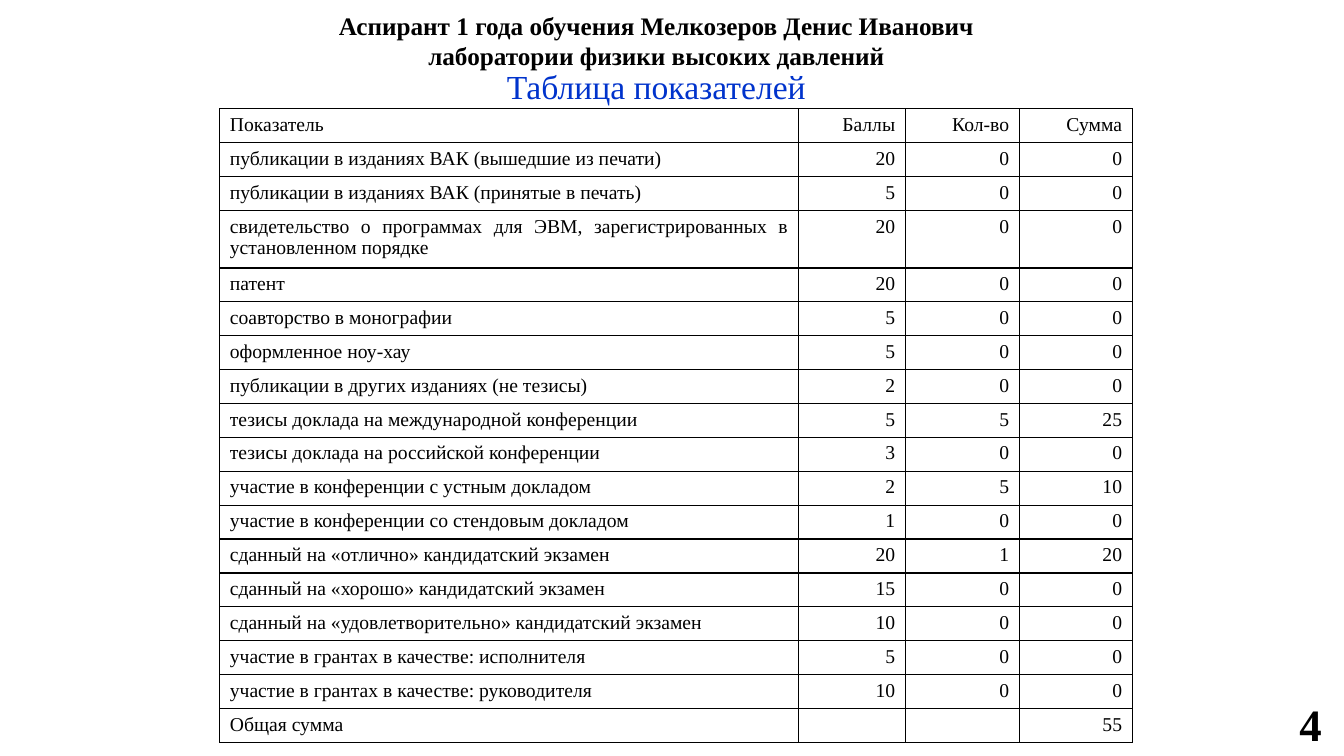
import pptx
import pptx.dml.color
import pptx.enum.text
import pptx.oxml.ns
import pptx.util
from lxml import etree

Inches = pptx.util.Inches
Pt = pptx.util.Pt
Align = pptx.enum.text.PP_ALIGN
Anchor = pptx.enum.text.MSO_ANCHOR
qn = pptx.oxml.ns.qn

HEADER = ("Показатель", "Баллы", "Кол-во", "Сумма")
INDICATORS = [
    ("публикации в изданиях ВАК (вышедшие из печати)", 20, 0),
    ("публикации в изданиях ВАК (принятые в печать)", 5, 0),
    ("свидетельство о программах для ЭВМ, зарегистрированных в установленном порядке", 20, 0),
    ("патент", 20, 0),
    ("соавторство в монографии", 5, 0),
    ("оформленное ноу-хау", 5, 0),
    ("публикации в других изданиях (не тезисы)", 2, 0),
    ("тезисы доклада на международной конференции", 5, 5),
    ("тезисы доклада на российской конференции", 3, 0),
    ("участие в конференции с устным докладом", 2, 5),
    ("участие в конференции со стендовым докладом", 1, 0),
    ("сданный на «отлично» кандидатский экзамен", 20, 1),
    ("сданный на «хорошо» кандидатский экзамен", 15, 0),
    ("сданный на «удовлетворительно» кандидатский экзамен", 10, 0),
    ("участие в грантах в качестве: исполнителя", 5, 0),
    ("участие в грантах в качестве: руководителя", 10, 0),
]
COLUMN_WIDTHS = (5.74, 1.06, 1.13, 1.12)
TABLE_HEIGHT = 6.29
TALL_ROW, TALL_HEIGHT = 3, 0.57


def color(hex_string):
    return pptx.dml.color.RGBColor.from_string(hex_string)


class Page:
    font = "Times New Roman"
    ink = "000000"
    accent = "0033CC"

    def __init__(self, deck):
        self.slide = deck.slides.add_slide(deck.slide_layouts[5])

    def fill_text(self, frame, text, size, align, ink=ink, bold=False):
        frame.text = text
        for para in frame.paragraphs:
            para.alignment = align
            for span in para.runs:
                span.font.name = self.font
                span.font.size = Pt(size)
                span.font.bold = bold
                span.font.color.rgb = color(ink)

    def title(self, text, left, top, width, height):
        box = self.slide.shapes.title
        box.left, box.top = Inches(left), Inches(top)
        box.width, box.height = Inches(width), Inches(height)
        box.text_frame.vertical_anchor = Anchor.MIDDLE
        box.text_frame.auto_size = pptx.enum.text.MSO_AUTO_SIZE.NONE
        self.fill_text(box.text_frame, text, 18, Align.CENTER, bold=True)

    def text(self, text, left, top, width, height, size, align, wrap=True, **style):
        box = self.slide.shapes.add_textbox(
            Inches(left), Inches(top), Inches(width), Inches(height))
        box.text_frame.word_wrap = wrap
        self.fill_text(box.text_frame, text, size, align, **style)
        return box

    def table(self, rows, left, top):
        frame = self.slide.shapes.add_table(
            len(rows), len(COLUMN_WIDTHS), Inches(left), Inches(top),
            Inches(sum(COLUMN_WIDTHS)), Inches(TABLE_HEIGHT))
        grid = frame.table
        grid.first_row = grid.horz_banding = False
        for column, width in zip(grid.columns, COLUMN_WIDTHS):
            column.width = Inches(width)
        row_height = (TABLE_HEIGHT - TALL_HEIGHT) / (len(rows) - 1)
        for r, values in enumerate(rows):
            grid.rows[r].height = Inches(TALL_HEIGHT if r == TALL_ROW else row_height)
            for c, value in enumerate(values):
                self.cell(grid.cell(r, c), str(value), Align.RIGHT if c else Align.JUSTIFY)

    def cell(self, cell, text, align):
        self.fill_text(cell.text_frame, text, 14, align)
        if not text:
            # An empty cell takes its line height from the paragraph end mark.
            para = cell.text_frame.paragraphs[0]
            etree.SubElement(para._p, qn("a:endParaRPr"), sz="1400")
        properties = cell._tc.get_or_add_tcPr()
        for side in ("a:lnL", "a:lnR", "a:lnT", "a:lnB"):
            line = etree.SubElement(properties, qn(side), w=str(Pt(1)))
            fill = etree.SubElement(line, qn("a:solidFill"))
            etree.SubElement(fill, qn("a:srgbClr"), val=self.ink)
        cell.fill.background()


def main():
    deck = pptx.Presentation()
    deck.slide_width, deck.slide_height = Inches(13.33), Inches(7.5)
    page = Page(deck)

    page.title("Аспирант 1 года обучения Мелкозеров Денис Иванович\v"
               "лаборатории физики высоких давлений", 2.26, 0.05, 8.5, 0.71)
    subtitle = page.text("Таблица показателей", 3.01, 0.6, 7, 0.47, 24,
                         Align.CENTER, ink=page.accent)
    subtitle.text_frame.paragraphs[0].space_before = Pt(4.8)

    scores = [(name, points, count, points * count) for name, points, count in INDICATORS]
    total = sum(score[-1] for score in scores)
    page.table([HEADER, *scores, ("Общая сумма", "", "", total)], 2.18, 1.08)

    page.text("4", 12.79, 6.86, 0.43, 0.64, 32, Align.LEFT, wrap=False, bold=True)
    deck.save("out.pptx")


if __name__ == "__main__":
    main()
